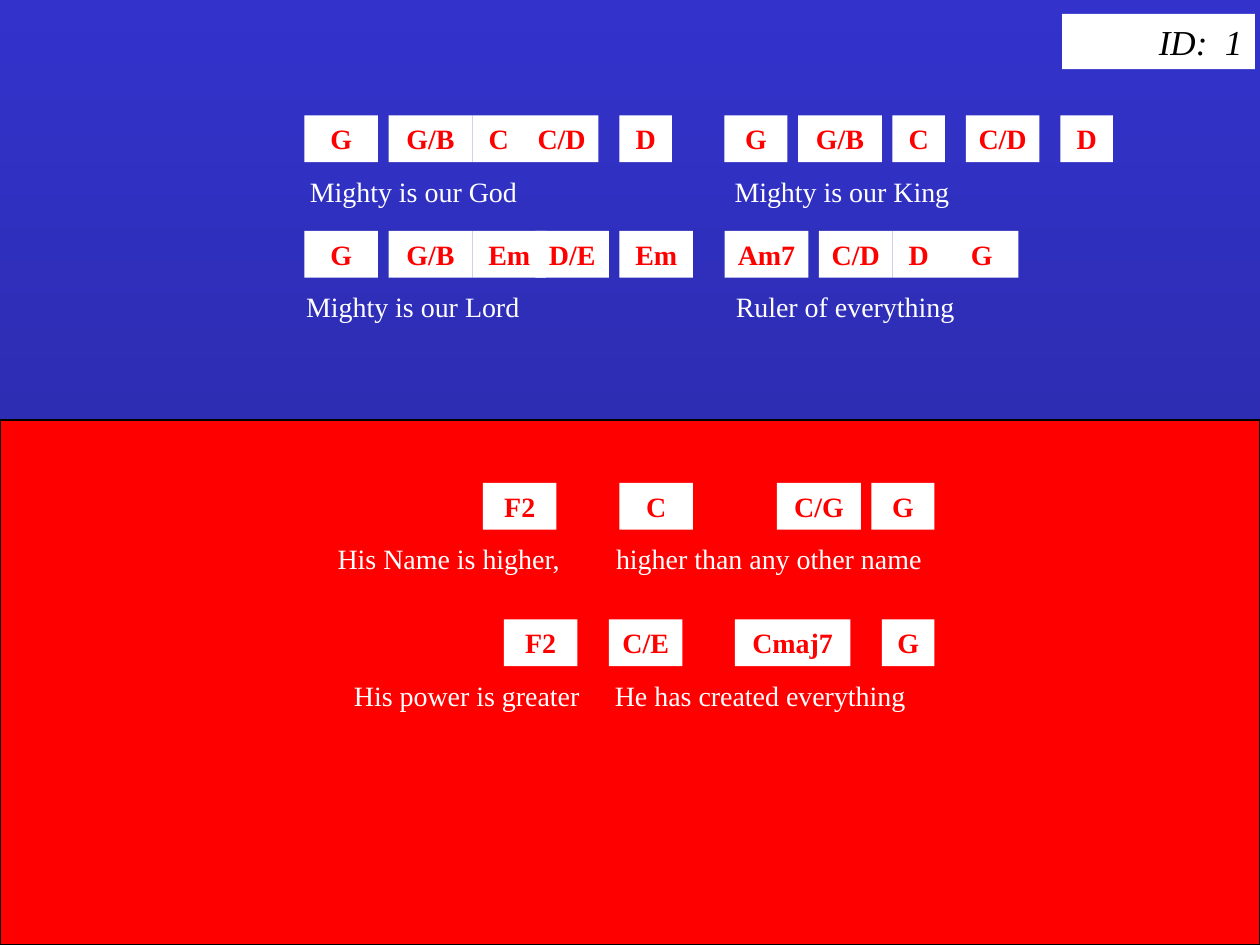
import pptx
import pptx.util
import pptx.dml.color
import pptx.enum.shapes
import pptx.enum.text
import pptx.oxml.ns
import lxml.etree

# Content: grid rows and columns count twelfths of an inch.
# Chords are (name, column, columns wide); phrases are (text, inches from left).
SONG_LINES = [
    {"row": 11,
     "chords": [("G", 29, 7), ("G/B", 37, 8), ("C", 45, 5), ("C/D", 50, 7), ("D", 59, 5),
                ("G", 69, 6), ("G/B", 76, 8), ("C", 85, 5), ("C/D", 92, 7), ("D", 101, 5)],
     "phrases": [("Mighty is our God", 2.46), ("Mighty is our King", 5.83)]},
    {"row": 22,
     "chords": [("G", 29, 7), ("G/B", 37, 8), ("Em", 45, 7), ("D/E", 51, 7), ("Em", 59, 7),
                ("Am7", 69, 8), ("C/D", 78, 7), ("D", 85, 5), ("G", 90, 7)],
     "phrases": [("Mighty is our Lord", 2.43), ("Ruler of everything", 5.84)]},
    {"row": 46,
     "chords": [("F2", 46, 7), ("C", 59, 7), ("C/G", 74, 8), ("G", 83, 6)],
     "phrases": [("His Name is higher,", 2.68), ("higher than any other name", 4.89)]},
    {"row": 59,
     "chords": [("F2", 48, 7), ("C/E", 58, 7), ("Cmaj7", 70, 11), ("G", 84, 5)],
     "phrases": [("His power is greater", 2.81), ("He has created everything", 4.88)]},
]
SONG_ID = "ID:  1"

# Layout and theme
WIDTH, HEIGHT = 10, 7.5
CELL = 1 / 12
LYRIC_DROP = 5
BOX_HEIGHT = 0.37
CHORUS_ROW = 40
ALIGN = pptx.enum.text.PP_ALIGN
THEME = {
    "sky": ("3333CC", "242492"),
    "chorus": "FF0000",
    "label": "FFFFFF",
    "edge": "000000",
    "chord": {"size": 16, "color": "FF0000", "bold": True},
    "lyric": {"size": 16, "color": "FFFFFF"},
    "id": {"size": 20, "color": "000000", "italic": True},
}
inches = pptx.util.Inches
rgb = pptx.dml.color.RGBColor.from_string


def write(box, text, style, align, side_margin):
    frame = box.text_frame
    settings = {
        "word_wrap": True,
        "auto_size": pptx.enum.text.MSO_AUTO_SIZE.SHAPE_TO_FIT_TEXT,
        "vertical_anchor": pptx.enum.text.MSO_ANCHOR.TOP,
        "margin_left": inches(side_margin),
        "margin_right": inches(side_margin),
    }
    for name, value in settings.items():
        setattr(frame, name, value)
    para = frame.paragraphs[0]
    para.alignment = align
    span = para.add_run()
    span.text = text
    font = {**style, "name": "Times New Roman", "size": pptx.util.Pt(style["size"])}
    span.font.color.rgb = rgb(font.pop("color"))
    for name, value in font.items():
        setattr(span.font, name, value)
    return para


def add_panel(page, left, top, width, height, fill):
    panel = page.shapes.add_shape(pptx.enum.shapes.MSO_SHAPE.RECTANGLE,
                                  *map(inches, (left, top, width, height)))
    panel.shadow.inherit = False
    panel.fill.solid()
    panel.fill.fore_color.rgb = rgb(fill)
    panel.line.fill.background()
    return panel


def add_lyric(page, row, phrases):
    (first, start), (second, stop) = phrases
    box = page.shapes.add_textbox(0, inches(row * CELL), inches(WIDTH), inches(BOX_HEIGHT))
    para = write(box, f"{first}\t{second}", THEME["lyric"], ALIGN.LEFT, 0)
    box.text_frame.margin_left = inches(start)
    # The second phrase begins at a tab stop
    qn = pptx.oxml.ns.qn
    stops = lxml.etree.SubElement(para._p.get_or_add_pPr(), qn("a:tabLst"))
    lxml.etree.SubElement(stops, qn("a:tab"), pos=str(inches(stop - start)), algn="l")


def main():
    deck = pptx.Presentation()
    deck.slide_width, deck.slide_height = inches(WIDTH), inches(HEIGHT)
    page = deck.slides.add_slide(deck.slide_layouts[6])

    # Background and chorus panel
    sky = page.background.fill
    sky.gradient()
    sky.gradient_angle = 270
    for stop, color in zip(sky.gradient_stops, THEME["sky"]):
        stop.color.rgb = rgb(color)
    chorus_top = CHORUS_ROW * CELL
    chorus = add_panel(page, 0, chorus_top, WIDTH, HEIGHT - chorus_top, THEME["chorus"])
    chorus.line.color.rgb = rgb(THEME["edge"])
    chorus.line.width = pptx.util.Pt(0.75)

    # Lyrics with their chords above
    for line in SONG_LINES:
        add_lyric(page, line["row"] + LYRIC_DROP, line["phrases"])
        for name, column, columns in line["chords"]:
            label = add_panel(page, column * CELL, line["row"] * CELL,
                              columns * CELL, BOX_HEIGHT, THEME["label"])
            write(label, name, THEME["chord"], ALIGN.CENTER, 0)

    # Song number
    corner = add_panel(page, 8.43, 0.11, 1.53, 0.44, THEME["label"])
    write(corner, SONG_ID, THEME["id"], ALIGN.RIGHT, 0.1)

    deck.save("out.pptx")


if __name__ == "__main__":
    main()
